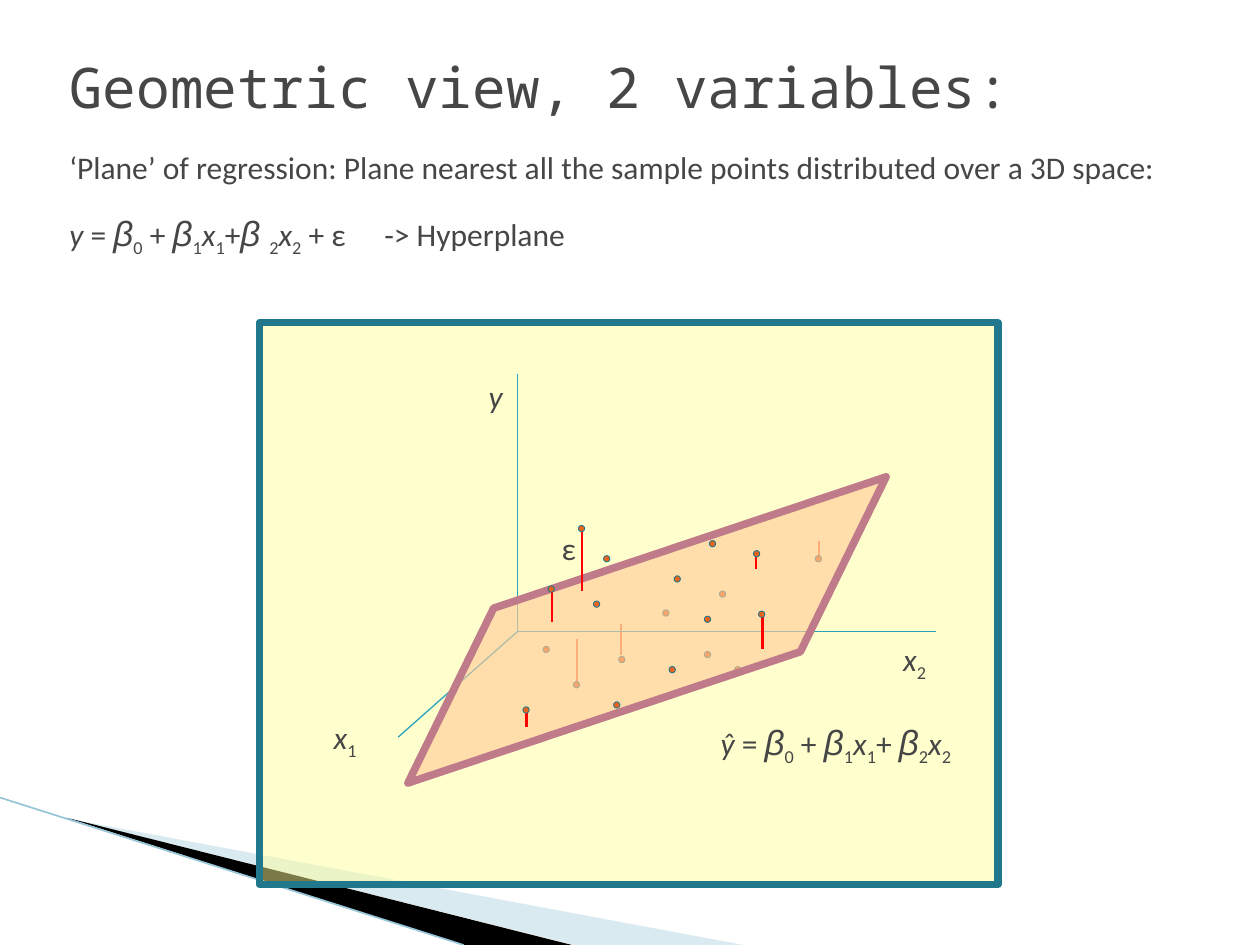
from typing import NamedTuple

from lxml import etree
from pptx import Presentation
from pptx.dml.color import RGBColor
from pptx.enum.shapes import MSO_CONNECTOR, MSO_SHAPE
from pptx.enum.text import MSO_ANCHOR, MSO_AUTO_SIZE, PP_ALIGN
from pptx.oxml.ns import qn
from pptx.util import Inches, Pt

STRAIGHT = MSO_CONNECTOR.STRAIGHT
RECTANGLE, ELLIPSE = MSO_SHAPE.RECTANGLE, MSO_SHAPE.OVAL
PARALLELOGRAM = MSO_SHAPE.PARALLELOGRAM
TOP, LEFT = MSO_ANCHOR.TOP, PP_ALIGN.LEFT
FIXED, GROW = MSO_AUTO_SIZE.NONE, MSO_AUTO_SIZE.SHAPE_TO_FIT_TEXT

COLORS = {
    "text": "464646", "axis": "2DA2BF", "teal": "21788D", "residual": "FF0000",
    "dot": "EB641B", "panel": "FFFF99", "plane": "FFCC99", "plane edge": "C07B8A",
    "pale wedge": "A0CBDC", "dark wedge": "000000", "wedge edge": "97C5D8",
}
DOT_SIZE = 0.05


class Segment(NamedTuple):
    x1: float
    y1: float
    x2: float
    y2: float


class Label(NamedTuple):
    left: float
    top: float
    width: float
    height: float
    terms: list


class Wedge(NamedTuple):
    color: str
    alpha: int
    points: list


# Each term is a text and its style.
STYLES = {
    "plain": {},
    "variable": {"italic": True},
    "beta": {"italic": True, "size": 20, "font": "Arial"},
    "gap": {"italic": True, "font": "Arial"},
    "index": {"baseline": -25000},
}
BETA_0 = [("β", "beta"), ("0", "index"), (" + ", "plain")]
BETA_1_X1 = [("β", "beta"), ("1", "index"), ("x", "variable"), ("1", "index")]
X2 = [("x", "variable"), ("2", "index")]
MODEL = [("y ", "variable"), ("= ", "plain"), *BETA_0, *BETA_1_X1, ("+", "plain"),
         ("β", "beta"), (" ", "gap"), ("2", "index"), *X2,
         (" + ε\t-> Hyperplane", "plain")]
ESTIMATE = [("ŷ ", "variable"), ("= ", "plain"), *BETA_0, *BETA_1_X1, ("+ ", "plain"),
            ("β", "beta"), ("2", "index"), *X2]

LABELS = [
    Label(5.62, 5.67, 2.15, 0.44, ESTIMATE),
    Label(2.55, 5.65, 0.4, 0.4, [("x", "variable"), ("1", "index")]),
    Label(7.07, 5.03, 0.4, 0.4, X2),
    Label(3.78, 2.94, 0.31, 0.4, [("y", "variable")]),
    Label(4.36, 4.15, 0.32, 0.4, [("ε", "plain")]),
]
WEDGES = [
    Wedge("pale wedge", 40, [(0.55, 6.5), (5.9, 7.5), (4.56, 7.5)]),
    Wedge("dark wedge", 100, [(0.53, 6.49), (4.54, 7.5), (3.68, 7.5)]),
]
AXES = [
    Segment(4.11, 2.97, 4.11, 5.01),
    Segment(4.11, 5.01, 7.43, 5.01),
    Segment(4.11, 5.01, 3.16, 5.85),
]
RESIDUALS_BELOW = [
    Segment(6.5, 4.29, 6.5, 4.43),
    Segment(4.58, 5.07, 4.58, 5.43),
    Segment(4.93, 4.95, 4.93, 5.2),
]
RESIDUALS_ABOVE = [
    Segment(4.38, 4.69, 4.38, 4.94),
    Segment(4.18, 5.66, 4.18, 5.77),
    Segment(4.62, 4.21, 4.62, 4.69),
    Segment(6, 4.41, 6, 4.52),
    Segment(6.05, 4.9, 6.05, 5.15),
]
DOTS_BELOW = [(4.31, 5.13), (4.91, 5.21), (4.55, 5.41), (6.47, 4.41), (5.71, 4.69),
              (4.79, 4.41), (5.26, 4.84), (5.59, 5.17), (5.83, 5.29)]
DOTS_ABOVE = [(5.98, 4.37), (5.63, 4.29), (4.71, 4.77), (4.87, 5.57), (6.02, 4.85),
              (5.59, 4.89), (5.35, 4.57), (5.31, 5.29), (4.15, 5.61), (4.35, 4.65),
              (4.59, 4.17)]


def rgb(name: str) -> RGBColor:
    return RGBColor.from_string(COLORS[name])


def add_span(para, text: str, size: float = 18, font: str = "Calibri",
             italic: bool = False, baseline: int = 0) -> None:
    span = para.add_run()
    span.text = text
    span.font.size = Pt(size)
    span.font.name = font
    span.font.italic = italic
    span.font.color.rgb = rgb("text")
    if baseline:
        span.font._element.set("baseline", str(baseline))


def add_terms(para, terms: list) -> None:
    for text, style in terms:
        add_span(para, text, **STYLES[style])


def paint(shape, fill: str, alpha: int = 100, line: str = "", width: float = 0) -> None:
    """Set the fill, its opacity in percent, and the outline."""
    shape.shadow.inherit = False
    shape.fill.solid()
    shape.fill.fore_color.rgb = rgb(fill)
    if alpha < 100:
        color = shape._element.spPr.find(qn("a:solidFill")).find(qn("a:srgbClr"))
        etree.SubElement(color, qn("a:alpha")).set("val", str(alpha * 1000))
    if line:
        shape.line.color.rgb = rgb(line)
        shape.line.width = Pt(width)
    else:
        shape.line.fill.background()


def add_box(page, kind, left: float, top: float, width: float, height: float):
    return page.shapes.add_shape(kind, Inches(left), Inches(top),
                                 Inches(width), Inches(height))


def add_segments(page, segments: list, color: str, width: float) -> None:
    for segment in segments:
        line = page.shapes.add_connector(STRAIGHT, *map(Inches, segment))
        line.line.color.rgb = rgb(color)
        line.line.width = Pt(width)
        etree.SubElement(line._element.spPr, qn("a:effectLst"))


def add_dots(page, dots: list) -> None:
    for left, top in dots:
        dot = add_box(page, ELLIPSE, left, top, DOT_SIZE, DOT_SIZE)
        paint(dot, "dot", line="teal", width=0.5)


def add_wedge(page, wedge: Wedge) -> None:
    points = [(Inches(x), Inches(y)) for x, y in wedge.points]
    builder = page.shapes.build_freeform(*points[0])
    builder.add_line_segments(points[1:], close=True)
    paint(builder.convert_to_shape(), wedge.color, wedge.alpha)


def add_label(page, label: Label) -> None:
    box = page.shapes.add_textbox(*map(Inches, label[:4]))
    box.text_frame.word_wrap = False
    box.text_frame.auto_size = GROW
    add_terms(box.text_frame.paragraphs[0], label.terms)


def place(holder, left: float, top: float, width: float, height: float):
    """Move a placeholder and return its top-anchored text frame."""
    holder.left, holder.top = Inches(left), Inches(top)
    holder.width, holder.height = Inches(width), Inches(height)
    frame = holder.text_frame
    frame.word_wrap = True
    frame.vertical_anchor = TOP
    frame.auto_size = FIXED
    return frame


def fill_title(page) -> None:
    para = place(page.shapes.title, 0.45, 0.37, 8.5, 1.25).paragraphs[0]
    para.alignment = LEFT
    add_span(para, "Geometric view, 2 variables:", size=32, font="Noto Sans Mono")


def fill_body(page) -> None:
    frame = place(page.placeholders[1], 0.45, 1.18, 9.1, 0.87)
    sentence = ("‘Plane’ of regression: Plane nearest all the sample points "
                "distributed over a 3D space:")
    rows = [([(sentence, "plain")], 0), (MODEL, 18)]
    for number, (terms, space_before) in enumerate(rows):
        para = frame.add_paragraph() if number else frame.paragraphs[0]
        para.line_spacing = 0.8
        para.space_before = Pt(space_before)
        properties = para._element.get_or_add_pPr()
        properties.set("marL", "0")
        properties.set("indent", "0")
        etree.SubElement(properties, qn("a:buNone"))
        tabs = etree.SubElement(properties, qn("a:tabLst"))
        etree.SubElement(tabs, qn("a:tab"), pos=str(Inches(2.59)), algn="l")
        add_terms(para, terms)


def main() -> None:
    deck = Presentation()
    deck.slide_width, deck.slide_height = Inches(10), Inches(7.5)
    page = deck.slides.add_slide(deck.slide_layouts[1])
    fill_title(page)
    fill_body(page)
    for wedge in WEDGES:
        add_wedge(page, wedge)
    add_segments(page, [Segment(0, 6.33, 3.68, 7.5)], "wedge edge", 0.95)

    add_segments(page, RESIDUALS_BELOW, "residual", 1.5)
    panel = add_box(page, RECTANGLE, 2.06, 2.56, 5.86, 4.46)
    paint(panel, "panel", 48, "teal", 4.33)
    add_segments(page, AXES, "axis", 0.75)
    add_dots(page, DOTS_BELOW)
    plane = add_box(page, PARALLELOGRAM, 2.95, 4.45, 4.37, 1.1)
    plane.adjustments[0] = 0.987
    plane.rotation = 341.5
    paint(plane, "plane", 63, "plane edge", 4.33)
    add_segments(page, RESIDUALS_ABOVE, "residual", 1.5)
    add_dots(page, DOTS_ABOVE)
    for label in LABELS:
        add_label(page, label)
    deck.save("out.pptx")


if __name__ == "__main__":
    main()
